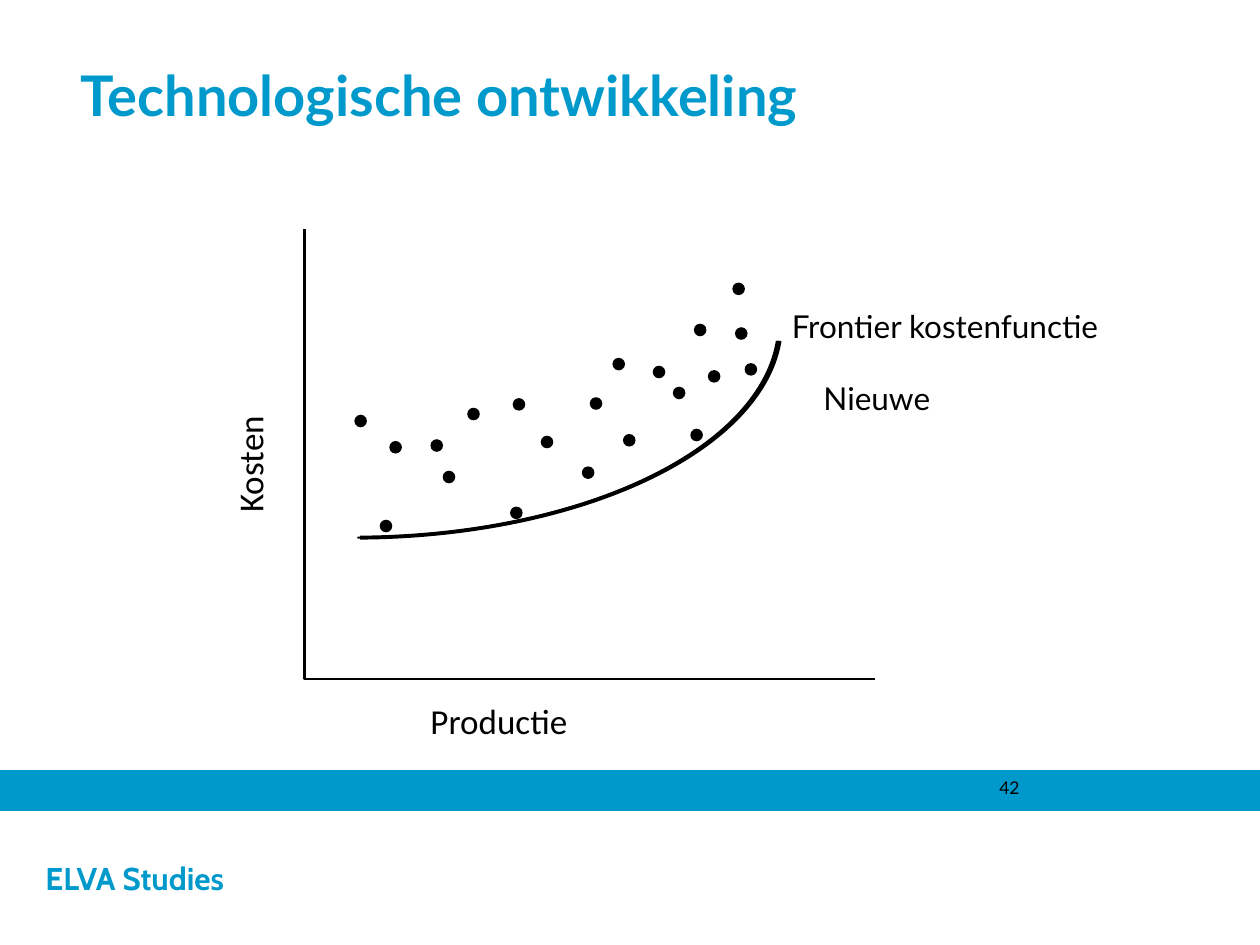
from pptx import Presentation
from pptx.dml.color import RGBColor
from pptx.enum import shapes as sh, text as tx
from pptx.util import Pt

BLUE, BLACK, WHITE = "0099CC", "000000", "FFFFFF"
DOTS = [
    (93, 102), (182, 117), (72, 120), (163, 96), (79, 138), (43, 166),
    (48.5, 121), (119, 96.5), (117.5, 158.5), (251.5, 76.5), (244.5, 30.5),
    (158.5, 135.5), (135, 118), (199, 78), (220.5, 114), (230.5, 80.5),
    (210.5, 90), (246, 56), (176, 73.5), (222.5, 54), (28.5, 106),
]


def tint(part, color):
    """Give a font, or a solid fill or line, its colour."""
    part.color.rgb = RGBColor.from_string(color)


def paint(shape, fill=None, line=None, width=0.75):
    """Set the fill and line of a shape; None leaves either out."""
    shape.shadow.inherit = False
    if fill:
        shape.fill.solid()
        shape.fill.fore_color.rgb = RGBColor.from_string(fill)
    else:
        shape.fill.background()
    if line:
        tint(shape.line, line)
        shape.line.width = Pt(width)
    else:
        shape.line.fill.background()
    return shape


def write(shape, words, size, font="Lato", color=BLACK, bold=False, **frame):
    """Put one left-aligned line of text in a shape."""
    body = shape.text_frame
    form = {"word_wrap": True, "auto_size": tx.MSO_AUTO_SIZE.NONE,
            "vertical_anchor": tx.MSO_ANCHOR.TOP, **frame}
    for key, val in form.items():
        setattr(body, key, val)
    body.text = words
    para = body.paragraphs[0]
    para.alignment = tx.PP_ALIGN.LEFT
    for key, val in {"name": font, "size": Pt(size), "bold": bold}.items():
        setattr(para.font, key, val)
    tint(para.font, color)


def add(slide, kind, box, **look):
    """Add a painted preset shape in the given box."""
    return paint(slide.shapes.add_shape(kind, *map(Pt, box)), **look)


def label(slide, box, words, size, **form):
    """Add a text box and return it."""
    shape = slide.shapes.add_textbox(*map(Pt, box))
    write(shape, words, size, **form)
    return shape


def head(slide, box):
    """Place and format the title."""
    title = slide.shapes.title
    for key, val in zip(("left", "top", "width", "height"), box):
        setattr(title, key, Pt(val))
    write(title, "Technologische ontwikkeling", 32, color=BLUE, bold=True)


def foot(slide, box):
    """Draw the blue band with the page number, and the name below it."""
    left, top, wide, high = box
    band = 22.5
    base = add(slide, sh.MSO_SHAPE.RECTANGLE,
               (left, top + band, wide, high - band), fill=WHITE)
    write(base, "ELVA Studies", 18, font="Cabin", color=BLUE, bold=True,
          vertical_anchor=tx.MSO_ANCHOR.MIDDLE, margin_left=Pt(26))
    add(slide, sh.MSO_SHAPE.RECTANGLE, (left, top, wide, band),
        fill=BLUE, line=BLUE)
    label(slide, (left + 564, top, 150, 18), "42", 10)


def plot(slide, box):
    """Draw the axes, dots, frontier curve and labels of the cost plot."""
    left, top, wide, high = box

    def at(x, y, w, h):
        """Shift a box to the plot's corner."""
        return left + x, top + y, w, h

    path = slide.shapes.build_freeform(Pt(left), Pt(top))
    ends = [(left, top + high), (left + wide, top + high)]
    path.add_line_segments([(Pt(x), Pt(y)) for x, y in ends], close=False)
    paint(path.convert_to_shape(), line=BLACK, width=1.5)

    for x, y in DOTS:
        add(slide, sh.MSO_SHAPE.OVAL, at(x, y, 7.2, 7.2), fill=BLACK)

    for x, width in ((-95.5, 1.25), (-94, 2.25)):
        arc = add(slide, sh.MSO_SHAPE.ARC, at(x, -190, 245, 487.5),
                  line=BLACK, width=width)
        arc.rotation = 90
        arc.adjustments[0], arc.adjustments[1] = 163.42, 215.09

    bare = dict.fromkeys(("margin_left", "margin_top", "margin_right",
                          "margin_bottom"), 0)
    label(slide, at(72, 268.5, 79, 24.5), "Productie", 20, font="Calibri",
          **{**bare, "word_wrap": False})
    cost = label(slide, at(-74.5, 110, 86.5, 31.5), "Kosten", 20,
                 font="Calibri")
    cost.rotation = 270
    label(slide, at(267.5, 41, 202, 29), "Frontier kostenfunctie", 18,
          margin_left=Pt(11))
    label(slide, at(289.5, 82, 100, 29), "Nieuwe", 18)


def main():
    """Build and save the slide."""
    deck = Presentation()
    deck.slide_width, deck.slide_height = Pt(720), Pt(540)
    slide = deck.slides.add_slide(deck.slide_layouts[5])
    foot(slide, (0, 440.5, 720, 99.5))
    head(slide, (39, 31, 643.5, 65.5))
    plot(slide, (174, 131, 326, 257))
    deck.save("out.pptx")


if __name__ == "__main__":
    main()
